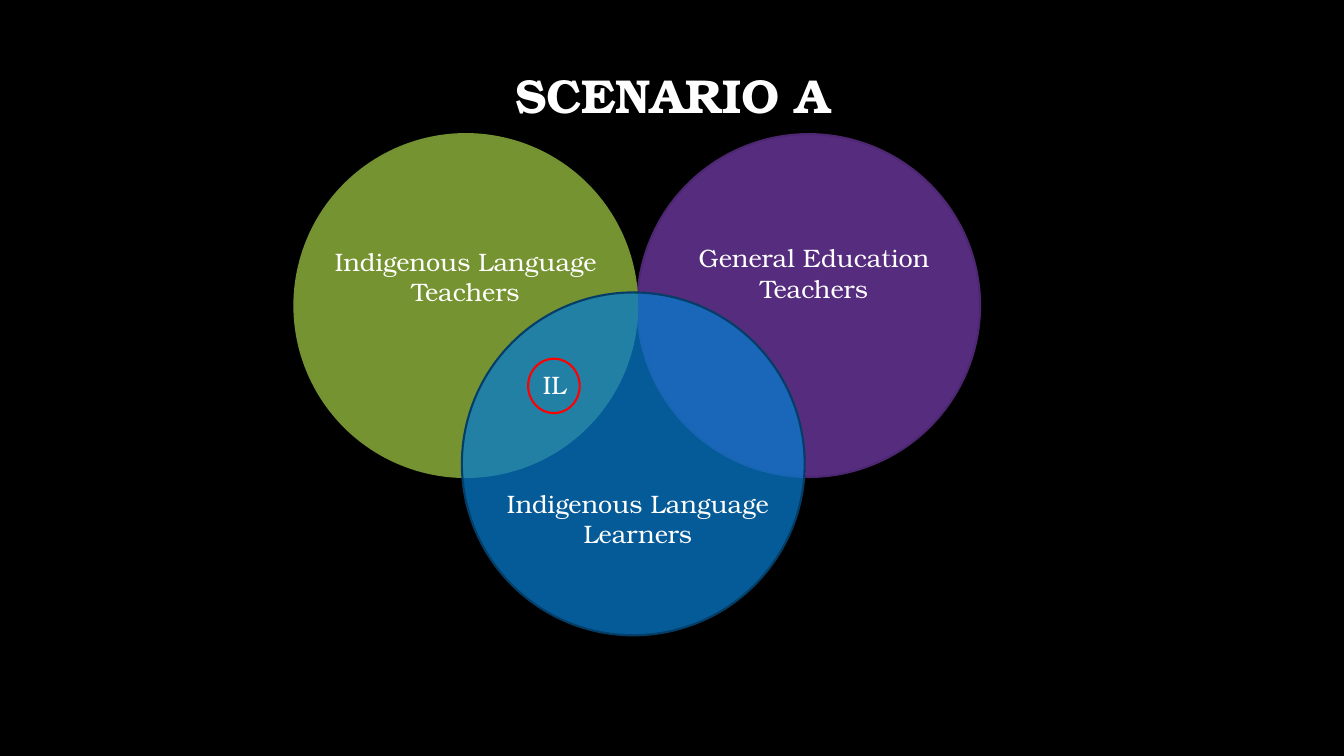
from lxml import etree
from pptx import Presentation
from pptx.dml.color import RGBColor
from pptx.enum import shapes, text
from pptx.oxml.ns import qn
from pptx.util import Cm, Pt

FONT = "TeX Gyre Bonum"
DIAMETER = 8.64
GROUPS = [
    (DIAMETER, 0, "743BA9", "4D2771"),
    (0, 0, "9EC544", "759232"),
    (4.22, 3.99, "077ACC", "043D66"),
]
LABELS = [
    ("IL", 5.66, 5.81, 1.8, 1.04),
    ("Indigenous Language Teachers", -0.28, 2.69, 9.19, 1.8),
    ("General Education Teachers", 9.17, 2.61, 7.85, 1.02),
    ("Indigenous Language Learners", 4.44, 8.79, 8.43, 1.02),
]


def colour(value):
    """Turn a hex string into a colour."""
    return RGBColor.from_string(value)


def write(frame, words, size, bold=False):
    """Put centred white words into a text frame."""
    frame.word_wrap = True
    frame.text = words
    paragraph = frame.paragraphs[0]
    paragraph.alignment = text.PP_ALIGN.CENTER
    font = paragraph.runs[0].font
    for name, value in {"name": FONT, "size": Pt(size), "bold": bold}.items():
        setattr(font, name, value)
    font.color.rgb = colour("FFFFFF")
    return paragraph


def add_circle(slide, left, top, width, height, outline, fill=None):
    """Draw an outlined ellipse, hollow or with a 75% opaque fill."""
    circle = slide.shapes.add_shape(
        shapes.MSO_SHAPE.OVAL, Cm(left), Cm(top), Cm(width), Cm(height))
    circle.shadow.inherit = False
    circle.line.color.rgb = colour(outline)
    circle.line.width = Pt(1.5)
    if fill is None:
        circle.fill.background()
        return
    circle.fill.solid()
    circle.fill.fore_color.rgb = colour(fill)
    tint = circle.fill._xPr.find(qn("a:solidFill"))[0]
    etree.SubElement(tint, qn("a:alpha"), val="75000")


def add_title(slide, left, top, width, height):
    """Place the scenario heading in the given box."""
    heading = slide.shapes.title
    box = {"left": left, "top": top, "width": width, "height": height}
    for name, value in box.items():
        setattr(heading, name, Cm(value))
    write(heading.text_frame, "SCENARIO A", 34, True).line_spacing = 0.9
    heading.text_frame.vertical_anchor = text.MSO_ANCHOR.MIDDLE


def add_venn(slide, left, top):
    """Place the three overlapping groups, their labels and the IL ring."""
    for dx, dy, fill, outline in GROUPS:
        add_circle(slide, left + dx, top + dy, DIAMETER, DIAMETER, outline, fill)
    for words, dx, dy, width, height in LABELS:
        label = slide.shapes.add_textbox(
            Cm(left + dx), Cm(top + dy), Cm(width), Cm(height))
        write(label.text_frame, words, 18)
        label.text_frame.auto_size = text.MSO_AUTO_SIZE.SHAPE_TO_FIT_TEXT
    add_circle(slide, left + 5.89, top + 5.66, 1.3, 1.37, "FF0000")


def main():
    """Build and save the scenario slide."""
    deck = Presentation()
    deck.slide_width, deck.slide_height = Cm(33.87), Cm(19.05)
    slide = deck.slides.add_slide(deck.slide_layouts[5])
    slide.background.fill.solid()
    slide.background.fill.fore_color.rgb = colour("000000")
    add_title(slide, 2.57, 0.64, 28.75, 3.68)
    add_venn(slide, 7.42, 3.38)
    deck.save("out.pptx")


if __name__ == "__main__":
    main()
